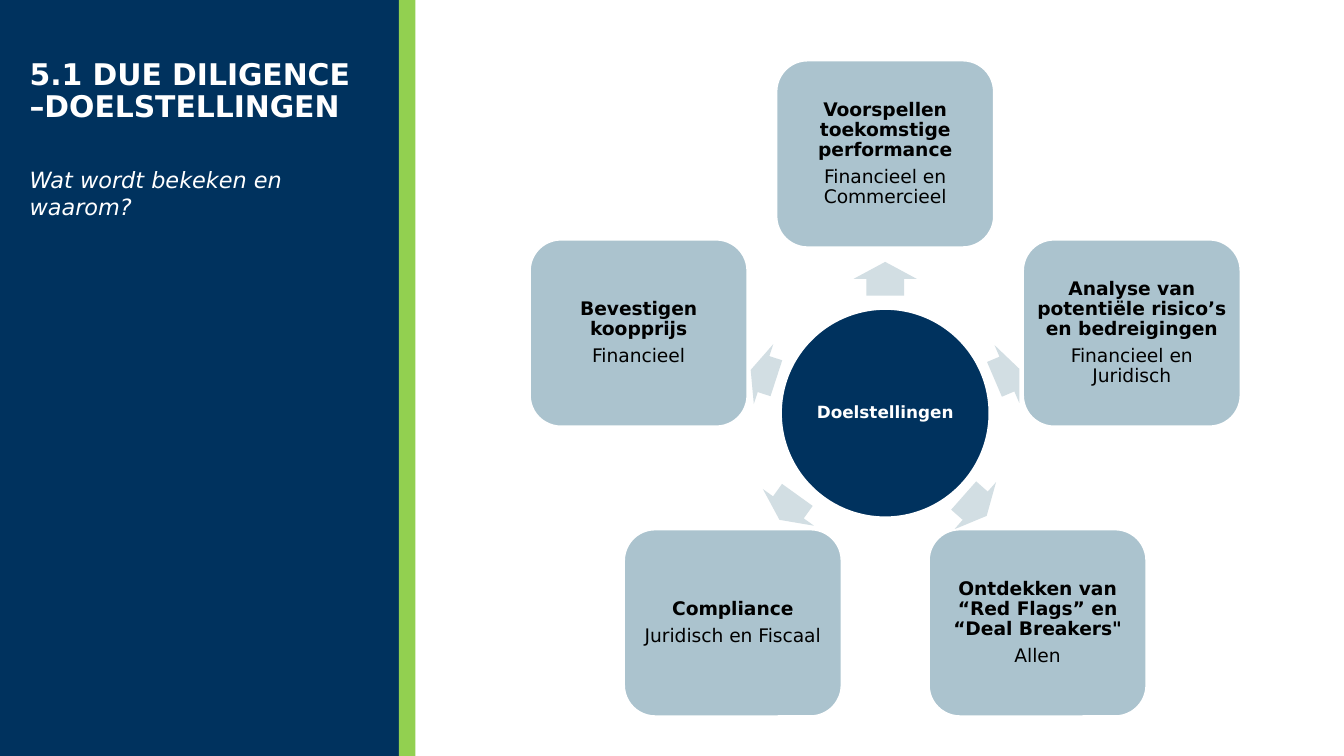
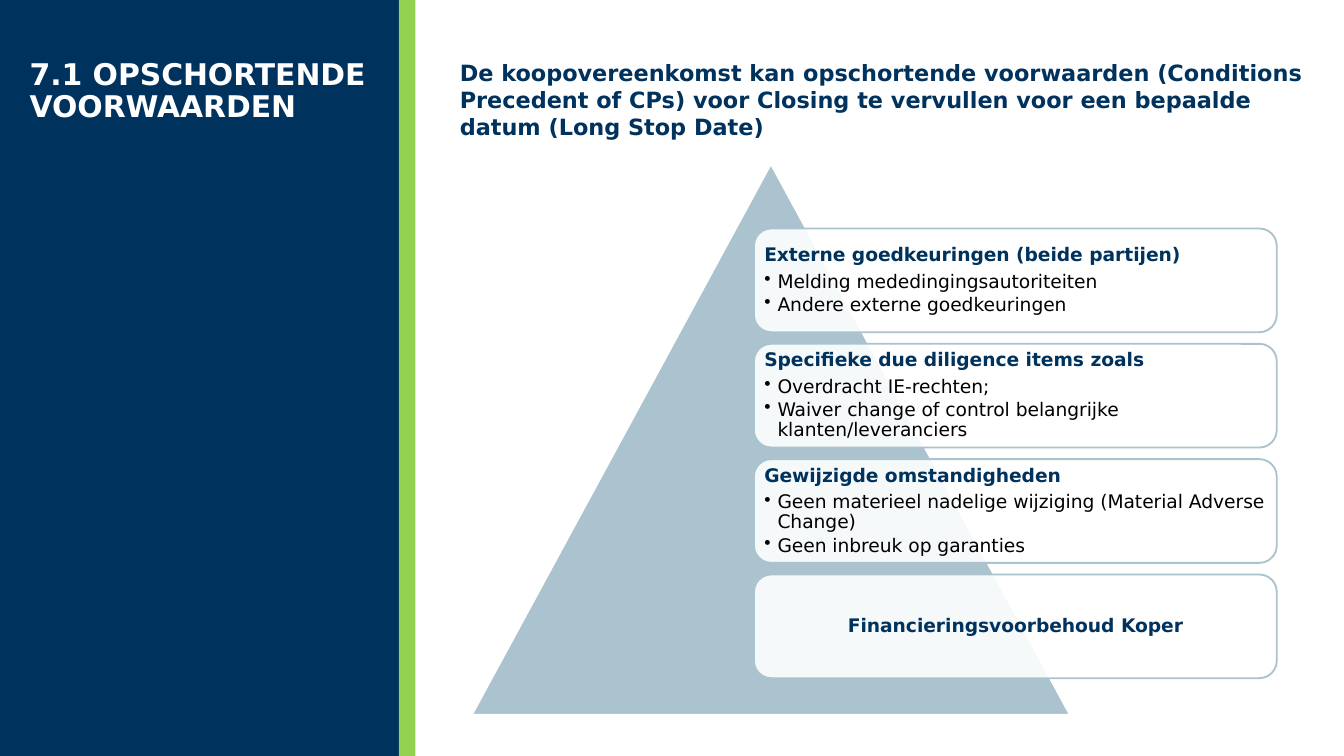
from math import cos, radians, sin

from lxml import etree
from pptx import Presentation
from pptx.dml.color import RGBColor
from pptx.enum.shapes import MSO_SHAPE
from pptx.enum.text import MSO_ANCHOR, MSO_AUTO_SIZE, PP_ALIGN
from pptx.oxml.ns import qn
from pptx.util import Cm, Pt

RECTANGLE, ROUNDED = MSO_SHAPE.RECTANGLE, MSO_SHAPE.ROUNDED_RECTANGLE
ELLIPSE, TRIANGLE = MSO_SHAPE.OVAL, MSO_SHAPE.ISOSCELES_TRIANGLE
ARROW = MSO_SHAPE.RIGHT_ARROW
TOP, MIDDLE = MSO_ANCHOR.TOP, MSO_ANCHOR.MIDDLE
LEFT, CENTER = PP_ALIGN.LEFT, PP_ALIGN.CENTER
FIXED, GROW = MSO_AUTO_SIZE.NONE, MSO_AUTO_SIZE.SHAPE_TO_FIT_TEXT

FONT = "DejaVu Sans"
NAVY, GREEN, STEEL, MIST = "00325E", "92D050", "ABC3CE", "D2DEE3"
WHITE, BLACK = "FFFFFF", "000000"

SLIDE_SIZE = (25.4, 14.29)
BANDS = [((0, 0, 7.54, 14.29), NAVY), ((7.54, 0, 0.31, 14.29), GREEN)]
TITLE_AREA = (0.56, 1.12, 6.53, 1.22)
SUBTITLE_AREA = (0.56, 3.15, 6.53, 1.02)
STATEMENT_AREA = (8.69, 1.12, 16.26, 12.34)
TRIANGLE_AREA = (8.92, 3.1, 11.3, 10.41)

GOALS_TITLE = "5.1 DUE DILIGENCE –DOELSTELLINGEN"
GOALS_SUBTITLE = "Wat wordt bekeken en waarom?"
HUB_LABEL = "Doelstellingen"
HUB_X, HUB_Y, HUB_SIZE = 16.73, 7.81, 3.94
CARD_WIDTH, CARD_HEIGHT, CARD_RADIUS = 4.11, 3.53, 4.9
ARROW_WIDTH = 1.19
GOALS = [
    {"heading": "Voorspellen toekomstige performance", "detail": "Financieel en Commercieel",
     "arrow": (0, -2.54, 0.64, 270)},
    {"heading": "Analyse van potentiële risico’s en bedreigingen", "detail": "Financieel en Juridisch",
     "arrow": (2.3, -0.74, 0.51, 336.8)},
    {"heading": "Ontdekken van “Red Flags” en “Deal Breakers\"", "detail": "Allen",
     "arrow": (1.7, 1.75, 0.58, 41.5)},
    {"heading": "Compliance", "detail": "Juridisch en Fiscaal",
     "arrow": (-1.83, 1.78, 0.58, 125.7)},
    {"heading": "Bevestigen koopprijs", "detail": "Financieel",
     "arrow": (-2.3, -0.74, 0.51, 198)},
]

CONDITIONS_TITLE = "7.1 OPSCHORTENDE VOORWAARDEN"
STATEMENT = (
    "De koopovereenkomst kan opschortende voorwaarden (Conditions Precedent of CPs) "
    "voor Closing te vervullen voor een bepaalde datum (Long Stop Date)"
)
PANEL_LEFT, PANEL_TOP, PANEL_WIDTH, PANEL_HEIGHT, PANEL_STEP = 14.25, 4.32, 9.88, 1.96, 2.18
BULLET_INDENT = 0.25
CONDITIONS = [
    ("Externe goedkeuringen (beide partijen)",
     ["Melding mededingingsautoriteiten", "Andere externe goedkeuringen"]),
    ("Specifieke due diligence items zoals",
     ["Overdracht IE-rechten;", "Waiver change of control belangrijke klanten/leveranciers"]),
    ("Gewijzigde omstandigheden",
     ["Geen materieel nadelige wijziging (Material Adverse Change)", "Geen inbreuk op garanties"]),
    ("Financieringsvoorbehoud Koper", []),
]

TITLE_STYLE = {"size": Pt(16), "bold": True, "color": WHITE}
SUBTITLE_STYLE = {"size": Pt(12), "bold": False, "italic": True, "color": WHITE}
STATEMENT_STYLE = {"size": Pt(12), "bold": True, "color": NAVY}
HUB_STYLE = {"size": Pt(9), "bold": True, "color": WHITE}
CARD_HEADING = {"size": Pt(10), "bold": True, "color": BLACK}
PANEL_HEADING = {"size": Pt(10), "bold": True, "color": NAVY}
DETAIL_STYLE = {"size": Pt(10), "bold": False, "color": BLACK}


def color(value):
    return RGBColor.from_string(value)


def set_all(target, values):
    for name, value in values.items():
        setattr(target, name, value)


def place(shape, area):
    set_all(shape, dict(zip(("left", "top", "width", "height"), map(Cm, area))))


def add_figure(page, kind, area, fill, line=None):
    shape = page.shapes.add_shape(kind, *map(Cm, area))
    shape.shadow.inherit = False
    shape.fill.solid()
    shape.fill.fore_color.rgb = color(fill)
    if line:
        shape.line.color.rgb = color(line)
        shape.line.width = Pt(1)
    else:
        shape.line.fill.background()
    return shape


def add_bullet(para):
    properties = para._p.get_or_add_pPr()
    indent = Cm(BULLET_INDENT)
    properties.set("marL", str(indent))
    properties.set("indent", str(-indent))
    etree.SubElement(properties, qn("a:buChar")).set("char", "•")


def write(shape, lines, align=LEFT, anchor=TOP, inset=0, spacing=1, fit=FIXED):
    frame = shape.text_frame
    set_all(frame, {"word_wrap": True, "auto_size": fit, "vertical_anchor": anchor})
    set_all(frame, dict.fromkeys(
        ("margin_left", "margin_top", "margin_right", "margin_bottom"), Cm(inset)))
    for index, (text, style, after, bulleted) in enumerate(lines):
        para = frame.add_paragraph() if index else frame.paragraphs[0]
        if bulleted:
            add_bullet(para)
        set_all(para, {"alignment": align, "line_spacing": spacing, "space_after": Pt(after)})
        span = para.add_run()
        span.text = text
        values = dict(style)
        span.font.color.rgb = color(values.pop("color"))
        set_all(span.font, {"name": FONT, **values})


def add_text(page, area, text, style, fit=FIXED):
    box = page.shapes.add_textbox(*map(Cm, area))
    write(box, [(text, style, 0, False)], fit=fit)


def add_page(deck, layout, title):
    page = deck.slides.add_slide(layout)
    place(page.shapes.title, TITLE_AREA)
    write(page.shapes.title, [(title, TITLE_STYLE, 0, False)], spacing=0.9, fit=GROW)
    return page


def move_bands_to_layout(page, layout):
    for position, (area, fill) in enumerate(BANDS, start=2):
        band = add_figure(page, RECTANGLE, area, fill)
        layout.shapes.element.insert(position, band.element)


def centered(x, y, width, height):
    return x - width / 2, y - height / 2, width, height


def draw_goals(page):
    add_text(page, SUBTITLE_AREA, GOALS_SUBTITLE, SUBTITLE_STYLE, GROW)
    hub = add_figure(page, ELLIPSE, centered(HUB_X, HUB_Y, HUB_SIZE, HUB_SIZE), NAVY, WHITE)
    write(hub, [(HUB_LABEL, HUB_STYLE, 0, False)], CENTER, MIDDLE, spacing=0.9)
    for index, goal in enumerate(GOALS):
        across, down, length, rotation = goal["arrow"]
        arrow_area = centered(HUB_X + across, HUB_Y + down, length, ARROW_WIDTH)
        arrow = add_figure(page, ARROW, arrow_area, MIST)
        arrow.adjustments[0], arrow.adjustments[1] = 0.6, 0.5
        arrow.rotation = rotation
        angle = radians(360 / len(GOALS) * index - 90)
        x, y = HUB_X + CARD_RADIUS * cos(angle), HUB_Y + CARD_RADIUS * sin(angle)
        card = add_figure(page, ROUNDED, centered(x, y, CARD_WIDTH, CARD_HEIGHT), STEEL, WHITE)
        lines = [(goal["heading"], CARD_HEADING, 3.5, False),
                 (goal["detail"], DETAIL_STYLE, 3.5, False)]
        write(card, lines, CENTER, MIDDLE, 0.03, 0.9)


def draw_conditions(page):
    add_figure(page, TRIANGLE, TRIANGLE_AREA, STEEL, WHITE)
    for index, (heading, details) in enumerate(CONDITIONS):
        area = (PANEL_LEFT, PANEL_TOP + index * PANEL_STEP, PANEL_WIDTH, PANEL_HEIGHT)
        panel = add_figure(page, ROUNDED, area, WHITE, STEEL)
        fill = panel.element.spPr.find(qn("a:solidFill"))
        etree.SubElement(fill[0], qn("a:alpha")).set("val", "90000")
        lines = [(heading, PANEL_HEADING, 3.5, False)]
        lines += [(detail, DETAIL_STYLE, 1.5, True) for detail in details]
        write(panel, lines, LEFT if details else CENTER, MIDDLE, 0.1, 0.9)
    add_text(page, STATEMENT_AREA, STATEMENT, STATEMENT_STYLE)


def main():
    deck = Presentation()
    deck.slide_width, deck.slide_height = map(Cm, SLIDE_SIZE)
    layout = deck.slide_layouts[5]
    goals_page = add_page(deck, layout, GOALS_TITLE)
    move_bands_to_layout(goals_page, layout)
    draw_goals(goals_page)
    draw_conditions(add_page(deck, layout, CONDITIONS_TITLE))
    deck.save("out.pptx")


if __name__ == "__main__":
    main()
